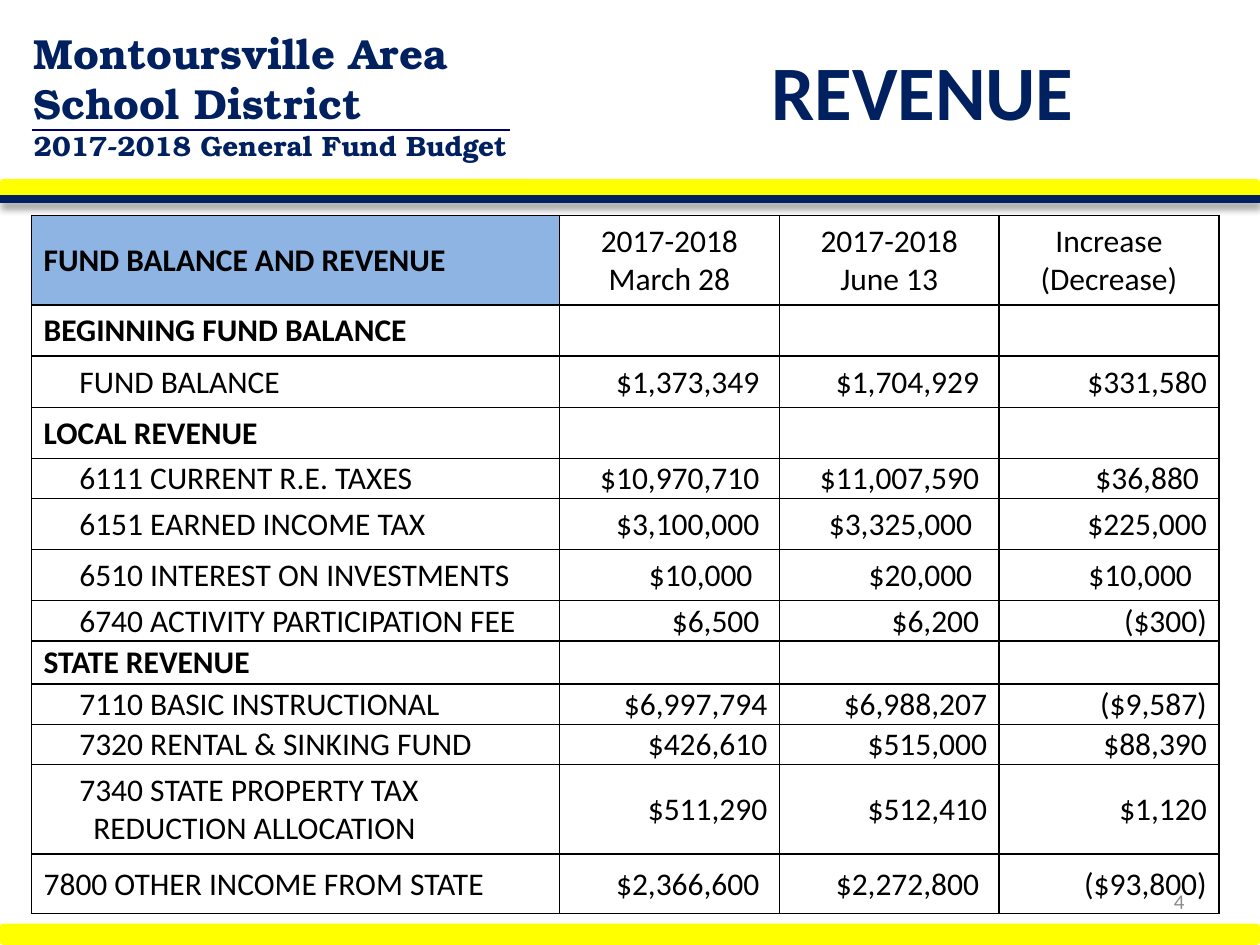
"""Build the revenue slide of the 2017-2018 general fund budget."""
from lxml import etree
from pptx import Presentation
from pptx.dml.color import RGBColor
from pptx.enum.shapes import MSO_CONNECTOR, MSO_SHAPE
from pptx.enum.text import MSO_ANCHOR, PP_ALIGN
from pptx.oxml import parse_xml
from pptx.util import Cm, Pt

LEFT, CENTER, RIGHT = PP_ALIGN.LEFT, PP_ALIGN.CENTER, PP_ALIGN.RIGHT
MIDDLE = MSO_ANCHOR.MIDDLE
ROUND, STRAIGHT = MSO_SHAPE.ROUNDED_RECTANGLE, MSO_CONNECTOR.STRAIGHT
NAVY = RGBColor(0x00, 0x20, 0x60)
INDIGO = RGBColor(0x00, 0x00, 0x66)
YELLOW = RGBColor(0xFF, 0xFF, 0x00)
BLUE = RGBColor(0x8E, 0xB4, 0xE3)
BLACK = RGBColor(0x00, 0x00, 0x00)
GRAY = RGBColor(0x8C, 0x8C, 0x8C)
NS = "http://schemas.openxmlformats.org/drawingml/2006/main"
SHADE = (
    f'<a:effectLst xmlns:a="{NS}"><a:outerShdw blurRad="50800" dist="38100" '
    'dir="5400000" algn="t" rotWithShape="0"><a:srgbClr val="000000">'
    '<a:alpha val="40000"/></a:srgbClr></a:outerShdw></a:effectLst>'
)
PLAIN = f'<a:effectLst xmlns:a="{NS}"/>'


def write(par, text, size, color, align=LEFT, bold=False, face="Calibri"):
    par.alignment = align
    run = par.add_run()
    run.text = text
    look = {"size": Pt(size), "bold": bold, "name": face}
    for key, value in look.items():
        setattr(run.font, key, value)
    run.font.color.rgb = color


def border(cell):
    props = cell._tc.get_or_add_tcPr()
    for side in ("lnL", "lnR", "lnT", "lnB"):
        line = etree.SubElement(props, f"{{{NS}}}{side}", w="12700")
        fill = etree.SubElement(line, f"{{{NS}}}solidFill")
        etree.SubElement(fill, f"{{{NS}}}srgbClr", val=str(BLACK))


deck = Presentation()
deck.slide_width, deck.slide_height = Cm(25.4), Cm(19.05)
slide = deck.slides.add_slide(deck.slide_layouts[5])
shapes = slide.shapes

for top in (3.61, 18.62):
    band = shapes.add_shape(ROUND, 0, Cm(top), Cm(25.4), Cm(0.43))
    band.shadow.inherit = False
    band.fill.solid()
    band.fill.fore_color.rgb = YELLOW
    band.line.fill.background()

rules = [
    (0, 25.4, 4.01, NAVY, 4.5, SHADE),
    (0.64, 10.29, 2.62, INDIGO, 1.5, PLAIN),
]
for start, end, top, color, width, effect in rules:
    rule = shapes.add_connector(STRAIGHT, Cm(start), Cm(top), Cm(end), Cm(top))
    rule.line.color.rgb = color
    rule.line.width = Pt(width)
    rule._element.spPr.append(parse_xml(effect))

frame = shapes.add_textbox(Cm(0.43), Cm(0.43), Cm(10.8), Cm(3)).text_frame
frame.word_wrap = True
brand = [
    ("Montoursville Area", 24),
    ("School District", 24),
    ("2017-2018 General Fund Budget", 16),
]
for spot, (text, size) in enumerate(brand):
    par = frame.add_paragraph() if spot else frame.paragraphs[0]
    write(par, text, size, NAVY, bold=True, face="TeX Gyre Bonum")

title = shapes.title
place = {"left": 11.86, "top": 0, "width": 13.13, "height": 3.61}
for key, value in place.items():
    setattr(title, key, Cm(value))
title.text_frame.vertical_anchor = MIDDLE
write(title.text_frame.paragraphs[0], " REVENUE", 44, NAVY, CENTER, True)

EDGE, WIDE, FAR = 0.24, 0.4, 0.54
INDENT = 0.96
HEAD, ITEM = True, False
rows = [
    ("FUND BALANCE AND REVENUE", HEAD, 1.81,
     ["2017-2018 March 28", "2017-2018 June 13", "Increase (Decrease)"], None),
    ("BEGINNING FUND BALANCE", HEAD, 1.03, [], None),
    ("FUND BALANCE", ITEM, 1.03,
     ["$1,373,349", "$1,704,929", "$331,580"], (WIDE, WIDE, EDGE)),
    ("LOCAL REVENUE", HEAD, 1.03, [], None),
    ("6111 CURRENT R.E. TAXES", ITEM, 0.81,
     ["$10,970,710", "$11,007,590", "$36,880"], (WIDE, WIDE, WIDE)),
    ("6151 EARNED INCOME TAX", ITEM, 1.03,
     ["$3,100,000", "$3,325,000", "$225,000"], (WIDE, FAR, EDGE)),
    ("6510 INTEREST ON INVESTMENTS", ITEM, 1.03,
     ["$10,000", "$20,000", "$10,000"], (FAR, FAR, FAR)),
    ("6740 ACTIVITY PARTICIPATION FEE", ITEM, 0.81,
     ["$6,500", "$6,200", "($300)"], (WIDE, WIDE, EDGE)),
    ("STATE REVENUE", HEAD, 0.87, [], None),
    ("7110 BASIC INSTRUCTIONAL", ITEM, 0.81,
     ["$6,997,794", "$6,988,207", "($9,587)"], (EDGE, EDGE, EDGE)),
    ("7320 RENTAL & SINKING FUND", ITEM, 0.81,
     ["$426,610", "$515,000", "$88,390"], (EDGE, EDGE, EDGE)),
    ("7340 STATE PROPERTY TAX REDUCTION ALLOCATION", ITEM, 1.81,
     ["$511,290", "$512,410", "$1,120"], (EDGE, EDGE, EDGE)),
    ("7800 OTHER INCOME FROM STATE", ITEM, 1.19,
     ["$2,366,600", "$2,272,800", "($93,800)"], (WIDE, WIDE, EDGE)),
]
high = sum(row[2] for row in rows)
table = shapes.add_table(
    len(rows), 4, Cm(0.64), Cm(4.34), Cm(23.93), Cm(high)
).table
table.first_row = table.horz_banding = False
for col, width in zip(table.columns, (10.64, 4.43, 4.43, 4.43)):
    col.width = Cm(width)

for spot, (label, bold, height, sums, pads) in enumerate(rows):
    table.rows[spot].height = Cm(height)
    inset = EDGE if bold or label.startswith("7800") else INDENT
    for col, cell in enumerate(table.rows[spot].cells):
        border(cell)
        cell.fill.background()
        cell.vertical_anchor = MIDDLE
        space = {
            "margin_left": EDGE if col and not pads else 0.03,
            "margin_right": pads[col - 1] if col and pads else EDGE,
            "margin_top": 0.02,
            "margin_bottom": 0,
        }
        if col == 0:
            space.update(margin_left=inset, margin_right=0.03)
        for key, value in space.items():
            setattr(cell, key, Cm(value))
        par = cell.text_frame.paragraphs[0]
        par.font.size = Pt(18)
        if col == 0:
            write(par, label, 18, BLACK, bold=bold)
        elif sums:
            write(par, sums[col - 1], 18, BLACK, RIGHT if pads else CENTER)

top = table.cell(0, 0)
top.fill.solid()
top.fill.fore_color.rgb = BLUE
hang = table.cell(11, 0).text_frame.paragraphs[0]._p.get_or_add_pPr()
hang.set("marL", str(Cm(0.28)))
hang.set("indent", str(-Cm(0.28)))

frame = shapes.add_textbox(Cm(18.21), Cm(17.65), Cm(5.92), Cm(1.02)).text_frame
frame.word_wrap = True
frame.vertical_anchor = MIDDLE
write(frame.paragraphs[0], "4", 12, GRAY, RIGHT)

deck.save("out.pptx")
